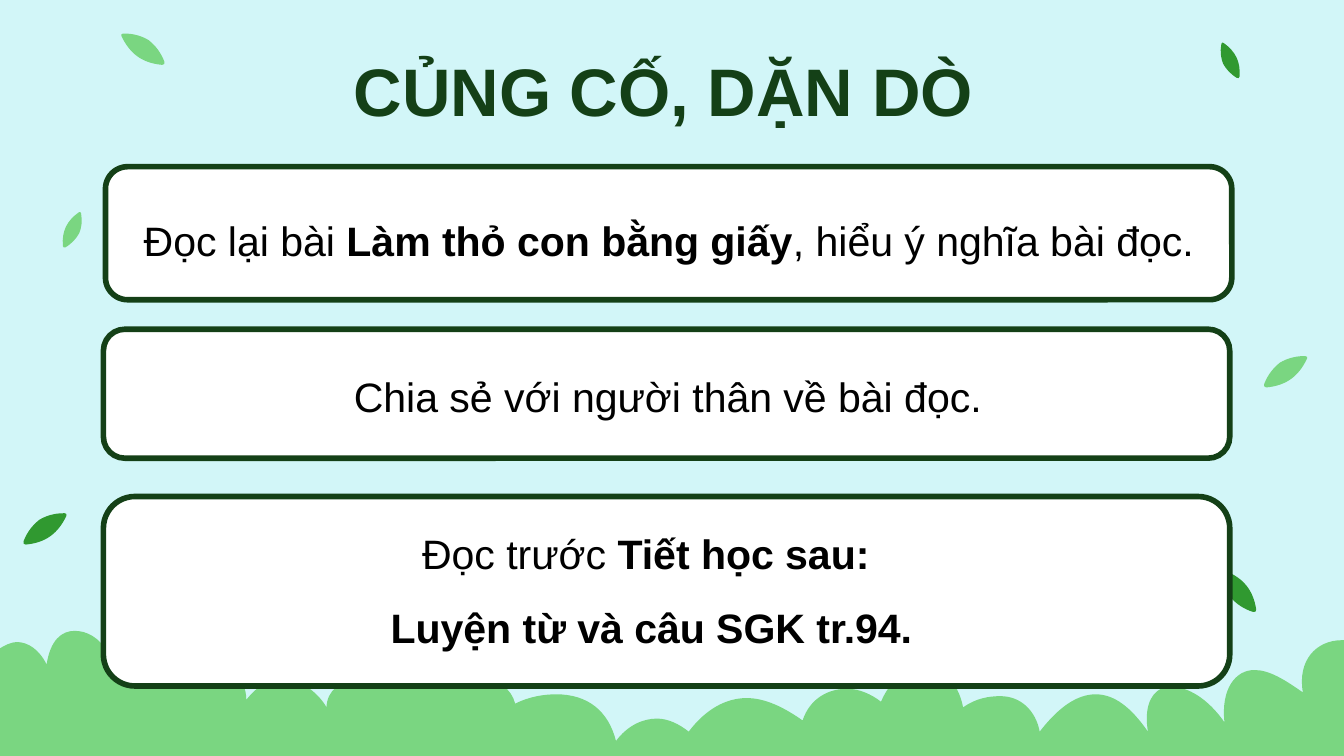
"""Build a closing lesson slide with three task cards among leaves and bushes."""
from lxml import etree
from pptx import Presentation
from pptx import util as u
from pptx.dml.color import RGBColor
from pptx.enum import shapes, text
from pptx.oxml.ns import qn

DARK, GREEN, LIGHT, WHITE, BLACK = "144017", "309930", "7AD681", "FFFFFF", "000000"

BUSH_BOX = (-1, 338, 723, 81)
BUSH_START = (721, 419)
BUSH_SEGMENTS = [
    (721, 343),
    (721, 343, 720, 343, 719, 343), (705, 343, 695, 354, 698, 371),
    (688, 364, 680, 359, 672, 359), (662, 359, 654, 369, 656, 387),
    (647, 374, 636, 368, 628, 368), (626, 368, 624, 368, 622, 369),
    (616, 372, 613, 380, 615, 392), (606, 379, 597, 372, 587, 372),
    (577, 372, 567, 379, 557, 392), (555, 381, 547, 373, 536, 373),
    (530, 373, 523, 374, 516, 379), (513, 364, 504, 358, 495, 358),
    (486, 358, 477, 364, 472, 376), (467, 372, 460, 369, 454, 369),
    (444, 369, 434, 374, 430, 386), (420, 379, 410, 374, 400, 374),
    (389, 374, 378, 380, 369, 392), (364, 388, 358, 385, 352, 385),
    (344, 385, 336, 389, 330, 397), (326, 381, 315, 372, 298, 372),
    (292, 372, 284, 373, 276, 377), (274, 369, 267, 364, 258, 364),
    (254, 364, 249, 364, 243, 369), (239, 360, 231, 354, 222, 354),
    (215, 354, 207, 358, 200, 364), (197, 364, 195, 364, 192, 364),
    (183, 364, 175, 370, 175, 379), (171, 372, 162, 364, 152, 364),
    (145, 364, 138, 367, 132, 375), (132, 363, 122, 353, 111, 353),
    (106, 353, 101, 355, 95, 359), (91, 353, 85, 349, 78, 348),
    (76, 348, 74, 348, 73, 348), (68, 348, 63, 348, 58, 350),
    (53, 341, 46, 338, 40, 338), (33, 338, 27, 343, 25, 356),
    (21, 348, 15, 344, 9, 344), (6, 344, 2, 346, -1, 348),
    (-1, 419),
]

LEAF_WIDTH, LEAF_HEIGHT = 23.5, 16.9
LEAF_START = (21.6, 0)
LEAF_SEGMENTS = [
    (16.6, 0, 12.2, 1.4, 8.6, 3.6), (5, 6.5, 2.2, 10, 0.2, 15.1),
    (-0.2, 16, 0.5, 16.9, 1.4, 16.8), (12.2, 15.8, 18.7, 10.8, 23.2, 1.4),
    (23.8, 0.7, 23, 0, 22.3, 0),
]


def rgb(color):
    """Turn a hex string into a colour."""
    return RGBColor.from_string(color)


def paint(sp, color):
    """Fill a shape with one colour."""
    sp.fill.solid()
    sp.fill.fore_color.rgb = rgb(color)


def add_outline(s, box, start, segments, color):
    """Draw a closed outline of lines and cubic curves given relative to its box."""
    left, top, width, height = box
    builder = s.shapes.build_freeform(left, top, scale=u.Pt(1))
    builder.add_line_segments([(left + width, top), (left + width, top + height),
                               (left, top + height)])
    sp = builder.convert_to_shape()
    sp.left, sp.top, sp.width, sp.height = (u.Pt(v) for v in box)
    outline = next(sp._element.iter(qn("a:path")))
    for child in list(outline):
        outline.remove(child)
    outline.set("w", str(u.Pt(width)))
    outline.set("h", str(u.Pt(height)))
    tags = ["a:moveTo"] + ["a:lnTo" if len(v) == 2 else "a:cubicBezTo" for v in segments]
    for tag, values in zip(tags, [start] + segments):
        step = etree.SubElement(outline, qn(tag))
        for x, y in zip(values[::2], values[1::2]):
            etree.SubElement(step, qn("a:pt"), x=str(u.Pt(x)), y=str(u.Pt(y)))
    etree.SubElement(outline, qn("a:close"))
    sp.shadow.inherit = False
    paint(sp, color)
    sp.line.fill.background()
    return sp


def move(values, dx, dy, factor=1, mirror=None):
    """Shift and scale a flat run of x, y values, mirrored inside a width if given."""
    result = []
    for x, y in zip(values[::2], values[1::2]):
        x = x if mirror is None else mirror - x
        result += [factor * x + dx, factor * y + dy]
    return tuple(result)


def add_bush(s):
    """Draw the row of bushes along the bottom."""
    left, top = BUSH_BOX[:2]
    add_outline(s, BUSH_BOX, move(BUSH_START, -left, -top),
                [move(v, -left, -top) for v in BUSH_SEGMENTS], LIGHT)


def add_leaf(s, left, top, color, scale=1, rotation=0, mirrored=False):
    """Draw one leaf, scaled, turned or mirrored."""
    mirror = LEAF_WIDTH if mirrored else None
    sp = add_outline(s, (left, top, scale * LEAF_WIDTH, scale * LEAF_HEIGHT),
                     move(LEAF_START, 0, 0, scale, mirror),
                     [move(v, 0, 0, scale, mirror) for v in LEAF_SEGMENTS], color)
    sp.rotation = rotation


def add_round_rect(s, left, top, width, height):
    """Add a bare rounded rectangle."""
    sp = s.shapes.add_shape(shapes.MSO_SHAPE.ROUNDED_RECTANGLE,
                            u.Pt(left), u.Pt(top), u.Pt(width), u.Pt(height))
    sp.shadow.inherit = False
    sp.fill.background()
    sp.line.fill.background()
    return sp


def add_card(s, left, top, height):
    """Draw a white card with a dark border."""
    sp = add_round_rect(s, left, top, 603.4, height)
    paint(sp, WHITE)
    sp.line.color.rgb = rgb(DARK)
    sp.line.width = u.Pt(3)


def add_text(s, box, paragraphs, size=22, color=BLACK, spacing=None, gap=None,
             anchor=text.MSO_ANCHOR.TOP):
    """Write centred paragraphs made of (words, bold) runs."""
    sp = add_round_rect(s, *box)
    tf = sp.text_frame
    tf.word_wrap = True
    tf.vertical_anchor = anchor
    for i, runs in enumerate(paragraphs):
        p = tf.add_paragraph() if i else tf.paragraphs[0]
        p.alignment = text.PP_ALIGN.CENTER
        p.line_spacing = spacing
        p.space_before = p.space_after = gap
        p.font.name = "Arial"
        p.font.size = u.Pt(size)
        p.font.color.rgb = rgb(color)
        for words, bold in runs:
            r = p.add_run()
            r.text = words
            r.font.bold = bold
    return sp


def main():
    """Build and save the slide."""
    prs = Presentation()
    prs.slide_width, prs.slide_height = u.Pt(720), u.Pt(405)
    s = prs.slides.add_slide(prs.slide_layouts[6])
    paint(s.background, "D2F6F8")

    add_bush(s)
    add_leaf(s, 12.4, 275, GREEN)
    add_leaf(s, 652.3, 308.3, GREEN, rotation=266.5)
    add_leaf(s, 677, 190.8, LIGHT)
    add_leaf(s, 650.4, 26, GREEN, scale=0.75, rotation=279.9)
    add_leaf(s, 29.7, 116.8, LIGHT, scale=0.75, rotation=80.1, mirrored=True)
    add_leaf(s, 64.8, 18, LIGHT, mirrored=True)

    add_text(s, (9.4, 15.1, 692, 66.2), [[("CỦNG CỐ, DẶN DÒ", True)]],
             size=36, color=DARK, anchor=text.MSO_ANCHOR.MIDDLE)

    add_card(s, 56.5, 89.3, 71.3)
    add_text(s, (56.6, 96.1, 603.4, 52.6),
             [[("Đọc lại bài ", False), ("Làm thỏ con bằng giấy", True),
               (", hiểu ý nghĩa bài đọc.", False)]], spacing=1.5, gap=u.Pt(3))
    add_card(s, 55.4, 176.4, 69.1)
    sharing = add_text(s, (72.3, 180, 571, 46.8),
                       [[("Chia sẻ với người thân về bài đọc.", False)]],
                       spacing=1.5, gap=u.Pt(3))
    paint(sharing, WHITE)
    add_card(s, 55.4, 266, 101.5)
    add_text(s, (47.8, 261.9, 602.6, 96.5),
             [[("Đọc trước ", False), ("Tiết học sau: ", True)],
              [("Luyện từ và câu SGK tr.94.", True)]], spacing=1.5)
    prs.save("out.pptx")


if __name__ == "__main__":
    main()
